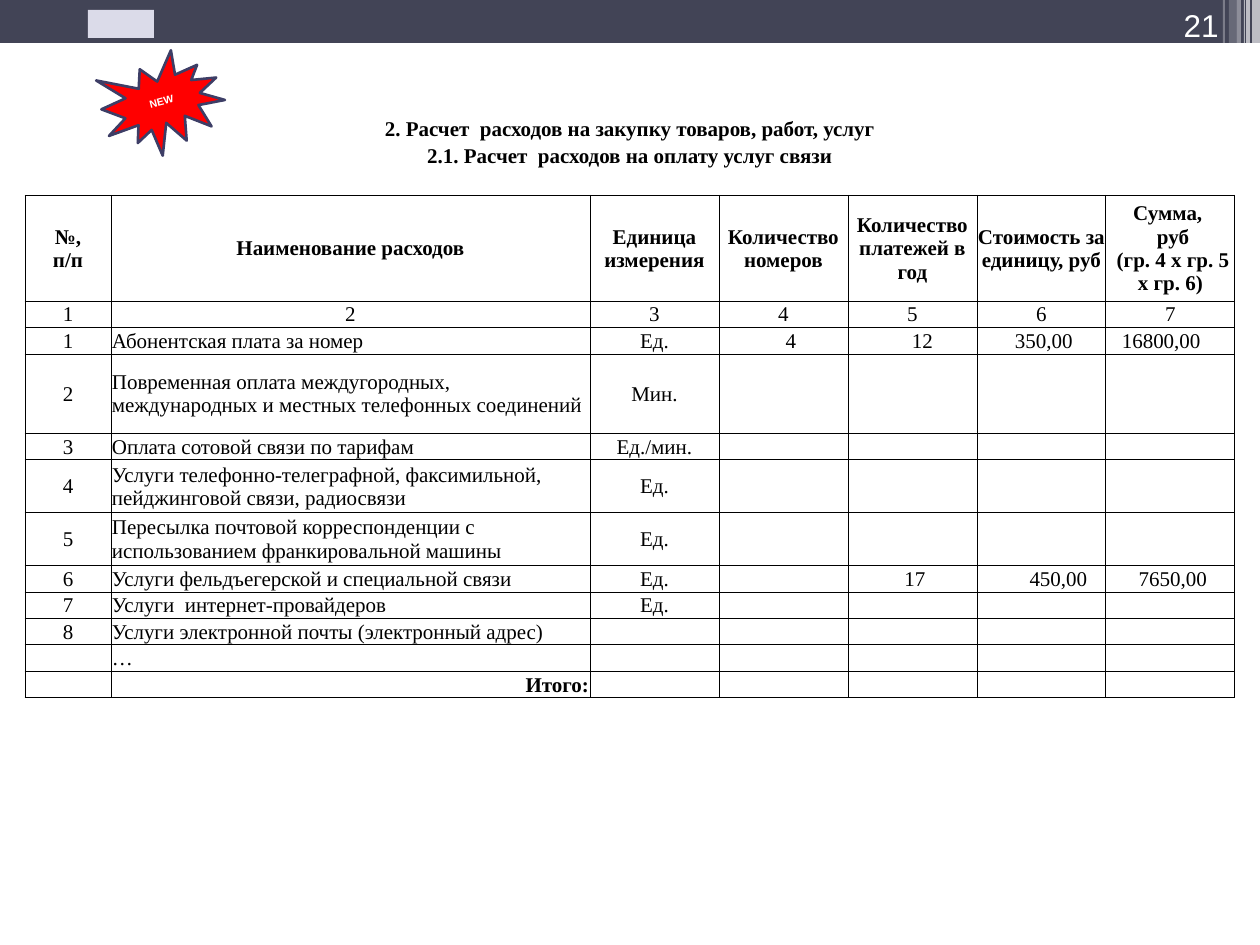
"""Builds the slide with the table of communication service costs."""
from dataclasses import dataclass

from lxml.etree import SubElement
from pptx import Presentation
from pptx.dml.color import RGBColor
from pptx.enum.shapes import MSO_SHAPE as SHAPE
from pptx.enum.text import MSO_ANCHOR as ANCHOR, PP_ALIGN as ALIGN
from pptx.oxml import parse_xml
from pptx.oxml.ns import nsdecls, qn
from pptx.util import Pt

EMU_PER_PX = 914400 / 126


def px(n):
    return round(n * EMU_PER_PX)


@dataclass(frozen=True)
class Theme:
    band: str = "424456"
    white: str = "FFFFFF"
    mark: str = "DBDBE9"
    seal: str = "FF0000"
    seal_line: str = "3D3E66"
    ink: str = "000000"
    sans: str = "Arial"
    serif: str = "Times New Roman"
    number_pt: int = 18
    seal_pt: int = 6
    table_pt: int = 12
    seal_line_pt: float = 1.5
    border_pt: float = 0.5


class SlideBuilder:
    def __init__(self, prs, theme):
        self.t = theme
        self.s = prs.slides.add_slide(prs.slide_layouts[6])

    def shape(self, kind, box, fill, line=None, alpha=None, rotation=0):
        sp = self.s.shapes.add_shape(kind, *map(px, box))
        sp.shadow.inherit = False
        sp.rotation = rotation
        sp.fill.solid()
        sp.fill.fore_color.rgb = RGBColor.from_string(fill)
        if alpha is not None:
            color = sp._element.spPr.find(qn("a:solidFill"))[0]
            SubElement(color, qn("a:alpha"), val=str(alpha * 1000))
        if line:
            sp.line.color.rgb = RGBColor.from_string(line)
            sp.line.width = Pt(self.t.seal_line_pt)
        else:
            sp.line.fill.background()
        return sp

    def add_text(self, tf, text, font, size, color, align, bold=False):
        p = tf.paragraphs[0]
        p.alignment = align
        for i, line in enumerate(text.split("\n")):
            if i:
                p.add_line_break()
            r = p.add_run()
            r.text = line
            r.font.name, r.font.size, r.font.bold = font, Pt(size), bold
            r.font.color.rgb = RGBColor.from_string(color)

    def text_box(self, box, text, size, align, anchor):
        tf = self.s.shapes.add_textbox(*map(px, box)).text_frame
        tf.word_wrap = True
        tf.vertical_anchor = anchor
        self.add_text(tf, text, self.t.sans, size, self.t.white, align)

    def seal(self, box, text, rotation):
        sp = self.shape(SHAPE.EXPLOSION1, box, self.t.seal, self.t.seal_line, rotation=rotation)
        sp.text_frame.vertical_anchor = ANCHOR.MIDDLE
        self.add_text(sp.text_frame, text, self.t.sans, self.t.seal_pt, self.t.white, ALIGN.CENTER, True)

    def table(self, box, col_widths, row_units):
        frame = self.s.shapes.add_table(len(row_units), len(col_widths), *map(px, box))
        tbl = frame.table
        tbl.first_row = tbl.horz_banding = False
        for col, width in zip(tbl.columns, col_widths):
            col.width = px(width)
        for row, units in zip(tbl.rows, row_units):
            row.height = px(box[3]) * units // sum(row_units)
        return tbl

    def cell(self, cell, text, align, bold=False, sides="LRTB", indent=1):
        cell.fill.background()
        cell.vertical_anchor = ANCHOR.MIDDLE
        cell.margin_left, cell.margin_right = px(indent), px(1)
        cell.margin_top, cell.margin_bottom = px(1), 0
        self.borders(cell, sides)
        if text:
            self.add_text(cell.text_frame, text, self.t.serif, self.t.table_pt, self.t.ink, align, bold)
        else:
            p = cell.text_frame.paragraphs[0]
            SubElement(p._p, qn("a:endParaRPr"), sz=str(self.t.table_pt * 100))

    def borders(self, cell, sides):
        tc_pr = cell._tc.get_or_add_tcPr()
        solid = f'<a:solidFill><a:srgbClr val="{self.t.ink}"/></a:solidFill>'
        for i, side in enumerate("LRTB"):
            paint = solid if side in sides else "<a:noFill/>"
            tc_pr.insert(i, parse_xml(
                f'<a:ln{side} {nsdecls("a")} w="{Pt(self.t.border_pt)}">{paint}</a:ln{side}>'))


STRIPES = [(1252, 8, 86, 65), (1246, 4, 86, 65), (1244, 1, 86, 60),
           (1237, 4, 86, 40), (1229, 8, 81, 20), (1223, 2, 81, 30)]
TITLES = ["2. Расчет  расходов на закупку товаров, работ, услуг",
          "2.1. Расчет  расходов на оплату услуг связи"]
HEADER = ["№,\nп/п", "Наименование расходов", "Единица измерения",
          "Количество номеров", "Количество платежей в год",
          "Стоимость за единицу, руб", "Сумма, \n руб\n (гр. 4 х гр. 5 х гр. 6)"]
COSTS = [
    ["1", "Абонентская плата за номер", "Ед.", "4", "12", "350,00", "16800,00"],
    ["2", "Повременная оплата междугородных, международных и местных телефонных соединений", "Мин."],
    ["3", "Оплата сотовой связи по тарифам", "Ед./мин."],
    ["4", "Услуги телефонно-телеграфной, факсимильной, пейджинговой связи, радиосвязи", "Ед."],
    ["5", "Пересылка почтовой корреспонденции с использованием франкировальной машины", "Ед."],
    ["6", "Услуги фельдъегерской и специальной связи", "Ед.", "", "17", "450,00", "7650,00"],
    ["7", "Услуги  интернет-провайдеров", "Ед."],
    ["8", "Услуги электронной почты (электронный адрес)"],
    ["", "…"],
    ["", "Итого:"],
]
INDENTS = {"4": 16, "12": 21, "350,00": 38, "16800,00": 16, "17": 6, "450,00": 35, "7650,00": 6}
LEFT_VALUES = ("350,00", "16800,00")
COL_WIDTHS = [86, 479] + [129] * 5
ROW_UNITS = [1, 1, 1, 4, 1, 1, 3, 1, 2, 2, 1, 1, 1, 1, 1]


def fill_table(b):
    tbl = b.table((25, 116, 1210, 582), COL_WIDTHS, ROW_UNITS)
    last = len(COL_WIDTHS) - 1
    for row, title in enumerate(TITLES):
        for col in range(last + 1):
            b.cell(tbl.cell(row, col), "" if col else title, ALIGN.CENTER, True, "")
        tbl.cell(row, 0).merge(tbl.cell(row, last))
    numbers = [str(n + 1) for n in range(last + 1)]
    for col in range(last + 1):
        b.cell(tbl.cell(2, col), "", ALIGN.CENTER, sides="B")
        b.cell(tbl.cell(3, col), HEADER[col], ALIGN.CENTER, True)
        b.cell(tbl.cell(4, col), numbers[col], ALIGN.CENTER)
    for row, cost in enumerate(COSTS, 5):
        for col in range(last + 1):
            text = cost[col] if col < len(cost) else ""
            total = text == "Итого:"
            left = col == 1 or text in LEFT_VALUES
            align = ALIGN.RIGHT if total else ALIGN.LEFT if left else ALIGN.CENTER
            indent = INDENTS.get(text, 1) if col > 2 else 1
            b.cell(tbl.cell(row, col), text, align, total, indent=indent)


def main():
    prs = Presentation()
    prs.slide_width, prs.slide_height = px(1260), px(945)
    t = Theme()
    b = SlideBuilder(prs, t)
    b.shape(SHAPE.RECTANGLE, (0, 0, 1260, 43), t.band)
    for left, width, height, alpha in STRIPES:
        b.shape(SHAPE.RECTANGLE, (left, 0, width, height), t.white, alpha=alpha)
    b.shape(SHAPE.RECTANGLE, (88, 10, 66, 28), t.mark)
    b.text_box((1126, 0, 105, 50), "21", t.number_pt, ALIGN.RIGHT, ANCHOR.BOTTOM)
    b.seal((102, 54, 122, 100), "NEW", 345.6)
    fill_table(b)
    prs.save("out.pptx")


if __name__ == "__main__":
    main()
